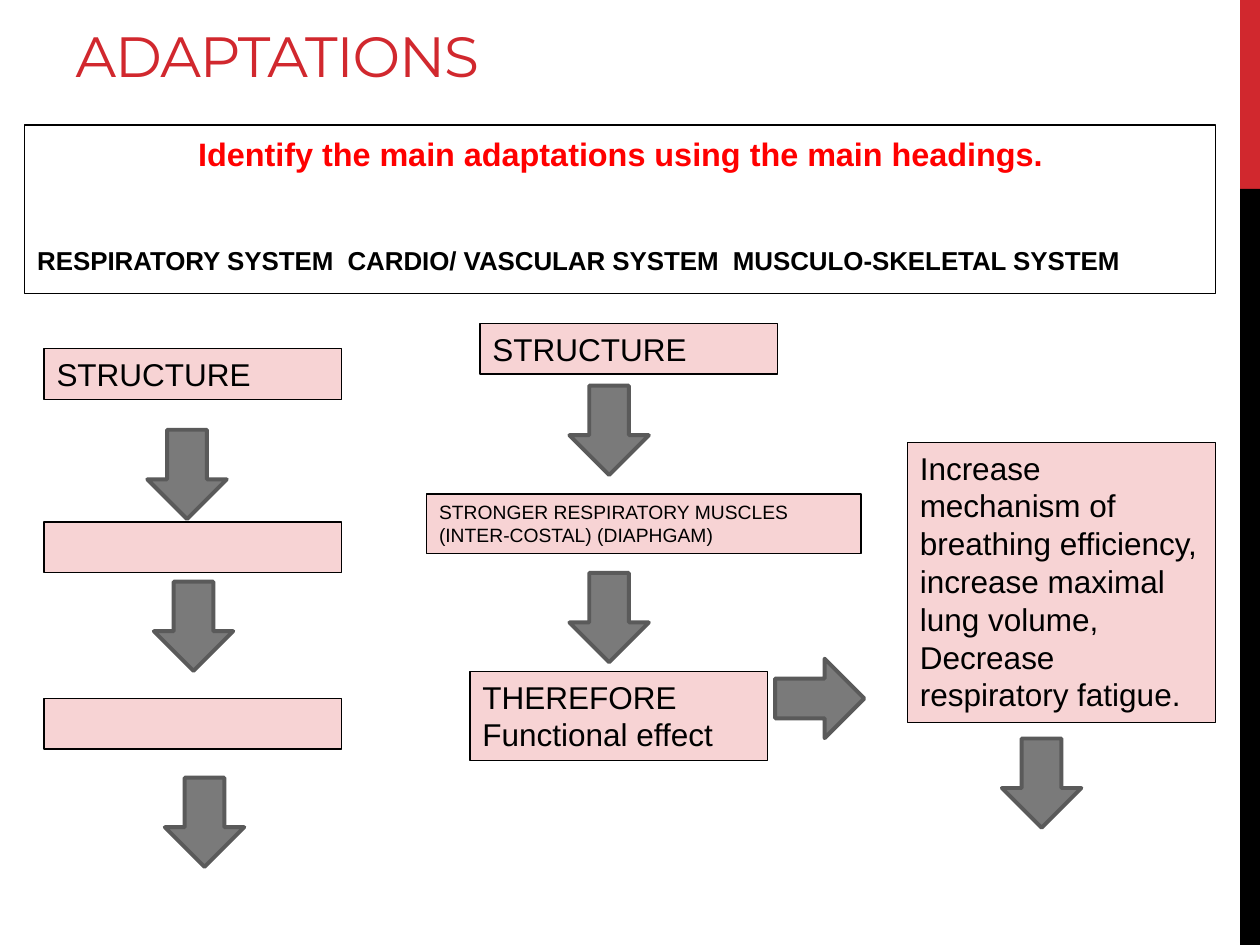
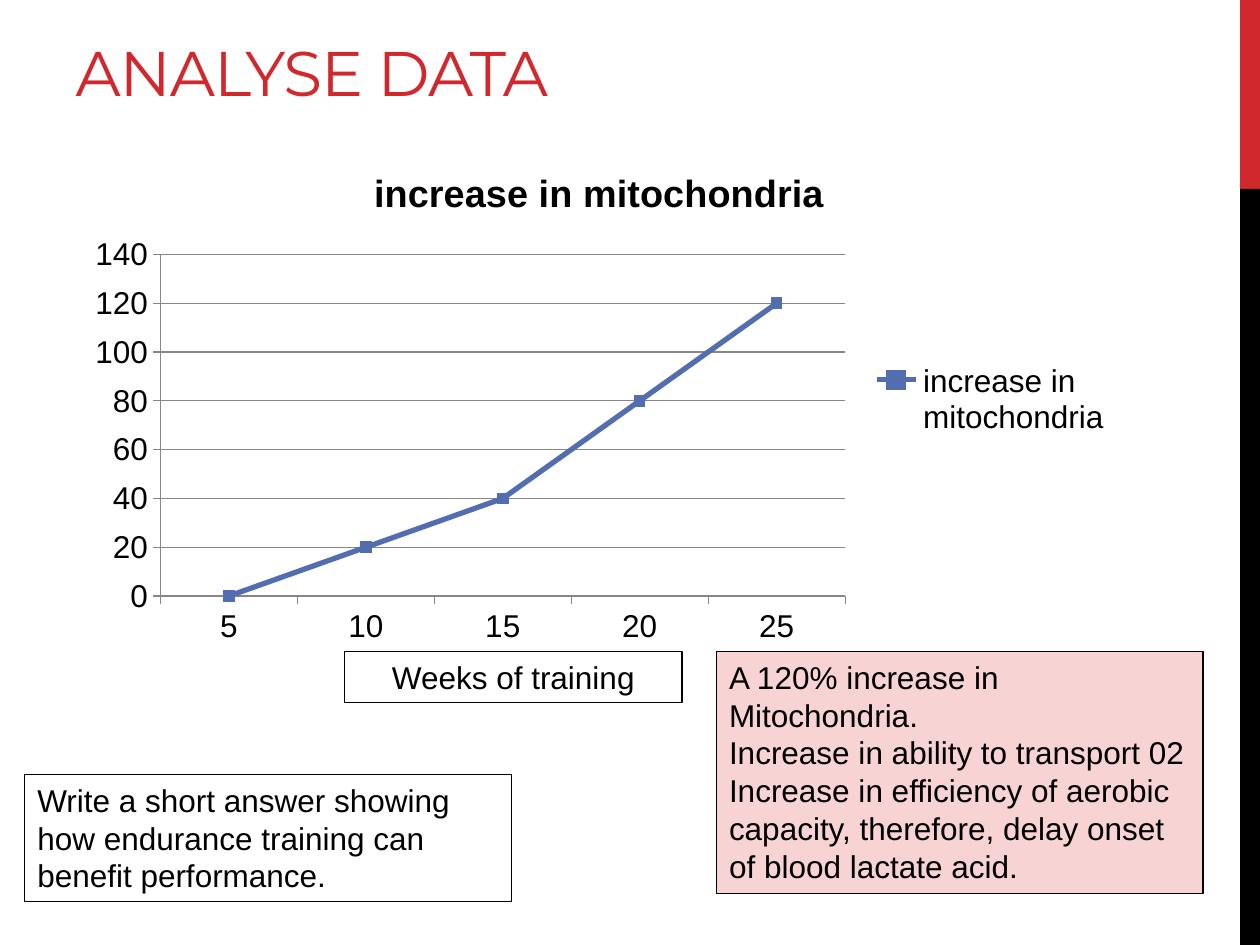
from pptx import Presentation
from pptx.chart.data import CategoryChartData
from pptx.dml.color import RGBColor
from pptx.enum.chart import XL_CHART_TYPE, XL_LEGEND_POSITION, XL_MARKER_STYLE, XL_TICK_MARK
from pptx.enum.shapes import MSO_SHAPE
from pptx.enum.text import MSO_ANCHOR, PP_ALIGN
from pptx.util import Pt

COLORS = {
    "accent": "D1282E", "black": "000000", "pink": "F7D3D4", "alert": "FF0000",
    "arrow": "7A7A7A", "arrow_edge": "5A5A5A", "series": "526DB0", "grid": "878787",
}
BODY_FONT, TITLE_FONT = "Arial", "Montserrat"
SLIDE_WIDTH, SLIDE_HEIGHT = 720, 540
BAND_LEFT, BAND_SPLIT = 708.7, 108

INSTRUCTION = "Identify the main adaptations using the main headings."
SYSTEMS = "RESPIRATORY SYSTEM  CARDIO/ VASCULAR SYSTEM  MUSCULO-SKELETAL SYSTEM"
INSTRUCTION_FRAME = (14.2, 71.4, 680.6, 96.4)

STEP_WIDTH, STEP_HEIGHT = 170, 29
STEP_BOXES = [
    ((25.2, 199.2, STEP_WIDTH, STEP_HEIGHT), ["STRUCTURE"], 18),
    ((25.2, 298.2, STEP_WIDTH, STEP_HEIGHT), [], 18),
    ((25.2, 399, STEP_WIDTH, STEP_HEIGHT), [], 18),
    ((274.3, 184.8, STEP_WIDTH, STEP_HEIGHT), ["STRUCTURE"], 18),
    ((243.8, 282.4, 248.2, 33.8), ["STRONGER RESPIRATORY MUSCLES (INTER-COSTAL) (DIAPHGAM)"], 11),
    ((268.6, 383.6, STEP_WIDTH, 51), ["THEREFORE", "Functional effect"], 18),
    ((518.5, 252.8, 176, 160), [
        "Increase mechanism of breathing efficiency, increase maximal lung volume,",
        "Decrease respiratory fatigue."], 18),
]
ARROW_SIZE = (45.4, 51)
ARROWS = [
    (84.2, 245.6, 0), (87.9, 332.4, 0), (94.2, 444.4, 0),
    (325.4, 220.4, 0), (325.4, 327.4, 0), (445.7, 373.6, 270), (572.5, 422, 0),
]

CHART_FRAME = (42.5, 82.8, 600, 291)
SERIES_NAME = "increase in mitochondria"
MITOCHONDRIA_BY_WEEK = {"5": 0, "10": 20, "15": 40, "20": 80, "25": 120}
NOTES = [
    ((14.2, 442.6, 278, 72.7), None, PP_ALIGN.LEFT,
     ["Write a short answer showing how endurance training can benefit performance."]),
    ((196.8, 372.3, 193, STEP_HEIGHT), None, PP_ALIGN.CENTER, ["Weeks of training"]),
    ((409.5, 372.3, 278, 138.2), "pink", PP_ALIGN.LEFT, [
        "A 120% increase in Mitochondria.",
        "Increase in ability to transport 02",
        "Increase in efficiency of aerobic capacity, therefore, delay onset of blood lactate acid."]),
]


def rgb(name):
    return RGBColor.from_string(COLORS[name])


def points(values):
    return [Pt(value) for value in values]


def style_font(font, size, color="black", bold=False, name=BODY_FONT):
    font.name, font.size, font.bold = name, Pt(size), bold
    font.color.rgb = rgb(color)


def add_shape(slide, kind, frame, fill=None, line=None, line_width=0.75):
    shape = slide.shapes.add_shape(kind, *points(frame))
    shape.shadow.inherit = False
    if fill:
        shape.fill.solid()
        shape.fill.fore_color.rgb = rgb(fill)
    else:
        shape.fill.background()
    if line:
        shape.line.color.rgb = rgb(line)
        shape.line.width = Pt(line_width)
    else:
        shape.line.fill.background()
    return shape


def add_box(slide, frame, texts, size=18, fill=None, alignment=PP_ALIGN.LEFT):
    shape = add_shape(slide, MSO_SHAPE.RECTANGLE, frame, fill, "black")
    text_frame = shape.text_frame
    text_frame.word_wrap = True
    text_frame.vertical_anchor = MSO_ANCHOR.TOP
    if texts:
        text_frame.text = "\n".join(texts)
    for paragraph in text_frame.paragraphs:
        paragraph.alignment = alignment
        style_font(paragraph.font, size)
    return shape


def add_slide(presentation, title, title_size, title_height):
    slide = presentation.slides.add_slide(presentation.slide_layouts[5])
    add_shape(slide, MSO_SHAPE.RECTANGLE,
              (BAND_LEFT, 0, SLIDE_WIDTH - BAND_LEFT, BAND_SPLIT), "accent")
    add_shape(slide, MSO_SHAPE.RECTANGLE,
              (BAND_LEFT, BAND_SPLIT, SLIDE_WIDTH - BAND_LEFT, SLIDE_HEIGHT - BAND_SPLIT), "black")
    placeholder = slide.shapes.title
    placeholder.left, placeholder.top, placeholder.width, placeholder.height = points(
        (36, 12.2, 456, title_height))
    text_frame = placeholder.text_frame
    text_frame.text = title
    text_frame.vertical_anchor = MSO_ANCHOR.BOTTOM
    paragraph = text_frame.paragraphs[0]
    paragraph.alignment = PP_ALIGN.LEFT
    style_font(paragraph.font, title_size, "accent", name=TITLE_FONT)
    paragraph.runs[0].font._element.set("spc", "-60")
    return slide


def build_adaptations(presentation):
    slide = add_slide(presentation, "ADAPTATIONS", 32.4, 42.5)
    instruction_box = add_box(slide, INSTRUCTION_FRAME, [INSTRUCTION, SYSTEMS])
    instruction_box.text_frame.margin_top = Pt(5)
    heading, systems = instruction_box.text_frame.paragraphs
    heading.alignment = PP_ALIGN.CENTER
    style_font(heading.font, 18.5, "alert", bold=True)
    style_font(systems.font, 14.8, bold=True)
    systems.space_before = Pt(41.4)
    for frame, texts, size in STEP_BOXES:
        add_box(slide, frame, texts, size, "pink")
    for left, top, rotation in ARROWS:
        arrow = add_shape(slide, MSO_SHAPE.DOWN_ARROW, (left, top, *ARROW_SIZE),
                          "arrow", "arrow_edge", 2.25)
        arrow.rotation = rotation


def add_mitochondria_chart(slide):
    data = CategoryChartData()
    data.categories = list(MITOCHONDRIA_BY_WEEK)
    data.add_series(SERIES_NAME, list(MITOCHONDRIA_BY_WEEK.values()))
    chart = slide.shapes.add_chart(
        XL_CHART_TYPE.LINE_MARKERS, *points(CHART_FRAME), data).chart
    style_font(chart.font, 18)
    chart.has_title = True
    chart.chart_title.include_in_layout = False
    chart.chart_title.text_frame.text = SERIES_NAME
    style_font(chart.chart_title.text_frame.paragraphs[0].font, 21.6, bold=True)
    chart.has_legend = True
    chart.legend.position = XL_LEGEND_POSITION.RIGHT
    chart.legend.include_in_layout = False
    chart.value_axis.has_major_gridlines = True
    for axis in (chart.category_axis, chart.value_axis):
        axis.major_tick_mark = XL_TICK_MARK.OUTSIDE
        axis.minor_tick_mark = XL_TICK_MARK.NONE
    for item in (chart.category_axis, chart.value_axis, chart.value_axis.major_gridlines):
        item.format.line.color.rgb = rgb("grid")
        item.format.line.width = Pt(0.75)
    plot = chart.plots[0]
    plot.vary_by_categories = False
    series = plot.series[0]
    series.smooth = False
    series.format.line.color.rgb = rgb("series")
    series.format.line.width = Pt(3)
    series.marker.style = XL_MARKER_STYLE.SQUARE
    series.marker.size = 6
    series.marker.format.fill.solid()
    series.marker.format.fill.fore_color.rgb = rgb("series")
    series.marker.format.line.color.rgb = rgb("series")


def build_analysis(presentation):
    slide = add_slide(presentation, "ANALYSE DATA", 36, 54)
    add_mitochondria_chart(slide)
    for frame, fill, alignment, texts in NOTES:
        add_box(slide, frame, texts, fill=fill, alignment=alignment)


def main():
    presentation = Presentation()
    presentation.slide_width, presentation.slide_height = points((SLIDE_WIDTH, SLIDE_HEIGHT))
    build_adaptations(presentation)
    build_analysis(presentation)
    presentation.save("out.pptx")


if __name__ == "__main__":
    main()
